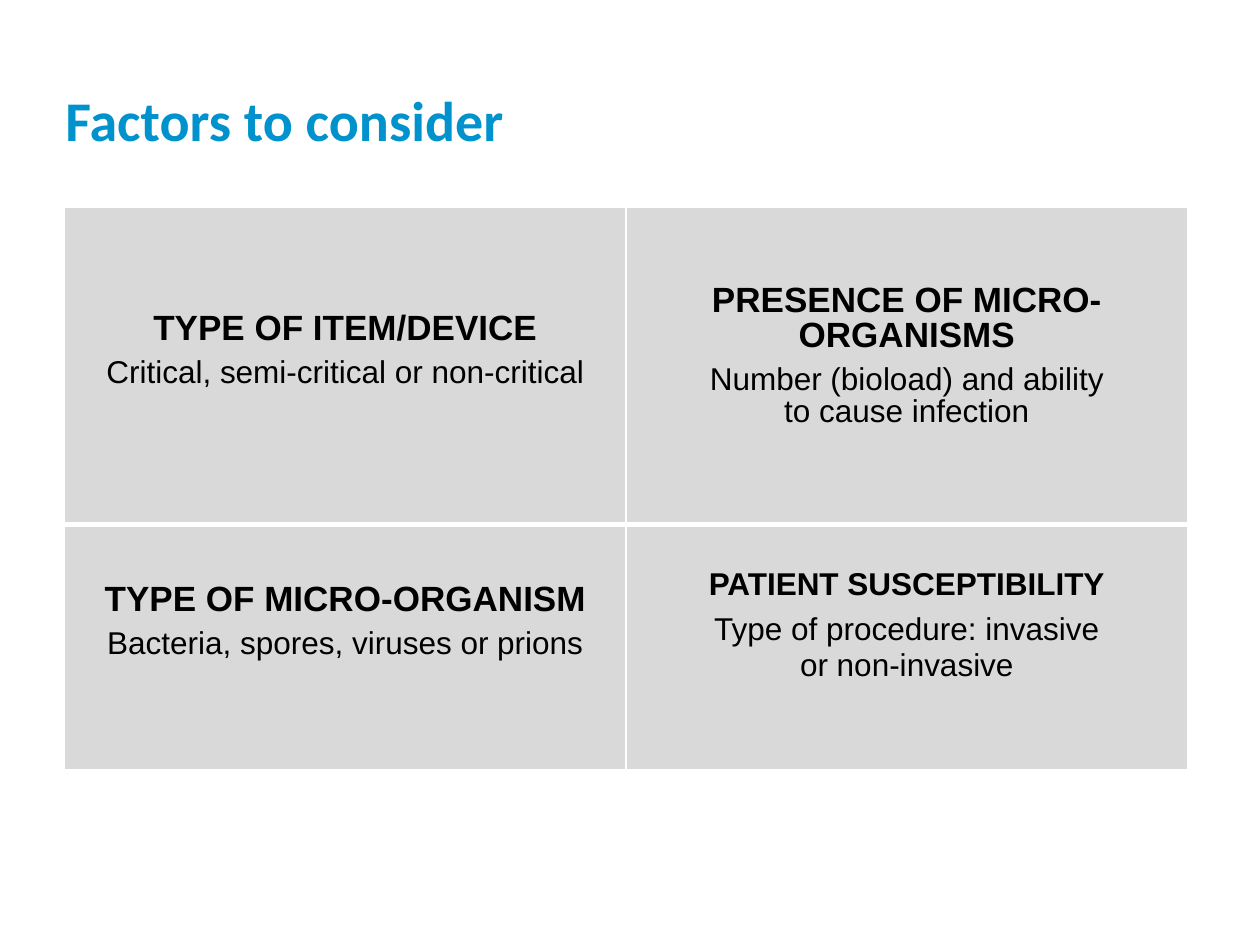
from dataclasses import dataclass

from lxml import etree
from pptx import Presentation
from pptx import util as u
from pptx.dml.color import RGBColor
from pptx.enum import text
from pptx.oxml import ns

BLUE = RGBColor(0x00, 0x92, 0xCC)
GREY = RGBColor(0xD9, 0xD9, 0xD9)
BLACK = RGBColor(0x00, 0x00, 0x00)
WHITE = RGBColor(0xFF, 0xFF, 0xFF)


@dataclass(frozen=True)
class Factor:
    row: int
    col: int
    heading: str
    details: tuple[str, ...]
    top_margin: float
    heading_size: int = 20
    line_spacing: float = 0.9


FACTORS = (
    Factor(0, 0, "TYPE OF ITEM/DEVICE",
           ("Critical, semi-critical or non-critical",), 2.13),
    Factor(0, 1, "PRESENCE OF MICRO-ORGANISMS",
           ("Number (bioload) and ability", "to cause infection"), 1.57),
    Factor(1, 0, "TYPE OF MICRO-ORGANISM",
           ("Bacteria, spores, viruses or prions",), 1.19),
    Factor(1, 1, "PATIENT SUSCEPTIBILITY",
           ("Type of procedure: invasive", "or non-invasive"), 0.85, 18, 1.0),
)


def set_borders(cell, widths: dict[str, float]) -> None:
    tc_pr = cell._tc.get_or_add_tcPr()
    for i, (side, width) in enumerate(widths.items()):
        ln = etree.Element(ns.qn(f"a:ln{side}"), w=str(u.Pt(width)))
        fill = etree.SubElement(ln, ns.qn("a:solidFill"))
        etree.SubElement(fill, ns.qn("a:srgbClr"), val=str(WHITE))
        tc_pr.insert(i, ln)


def fill_cell(cell, factor: Factor) -> None:
    cell.fill.solid()
    cell.fill.fore_color.rgb = GREY
    cell.margin_top = u.Cm(factor.top_margin)
    tf = cell.text_frame
    tf.text = "\n".join((factor.heading, *factor.details))
    for i, p in enumerate(tf.paragraphs):
        is_heading = i == 0
        p.alignment = text.PP_ALIGN.CENTER
        p.line_spacing = factor.line_spacing
        p.space_after = u.Pt(6 if is_heading else 0)
        p.font.name = "Arial"
        p.font.size = u.Pt(factor.heading_size if is_heading else 18)
        p.font.bold = is_heading
        p.font.color.rgb = BLACK
    set_borders(cell, {"L": 1, "R": 1,
                       "T": 3 if factor.row == 1 else 1,
                       "B": 3 if factor.row == 0 else 1})


def add_title(s, title: str) -> None:
    sp = s.shapes.title
    sp.left, sp.top, sp.width, sp.height = (
        u.Cm(1.27), u.Cm(0.38), u.Cm(25.4), u.Cm(2.72))
    tf = sp.text_frame
    tf.text = title
    tf.auto_size = text.MSO_AUTO_SIZE.NONE
    tf.vertical_anchor = text.MSO_ANCHOR.BOTTOM
    tf.margin_left, tf.margin_right = u.Cm(0.05), u.Cm(1)
    tf.margin_top = tf.margin_bottom = 0
    p = tf.paragraphs[0]
    p.alignment = text.PP_ALIGN.LEFT
    p.line_spacing = 0.9
    p.font.name = "Calibri"
    p.font.size = u.Pt(32)
    p.font.bold = True
    p.font.color.rgb = BLUE


def add_factor_table(s, factors: tuple[Factor, ...]) -> None:
    table = s.shapes.add_table(
        2, 2, u.Cm(1.3), u.Cm(4.17), u.Cm(22.64), u.Cm(11.35)).table
    table.first_row = table.horz_banding = False
    for row, height in zip(table.rows, (6.4, 4.95)):
        row.height = u.Cm(height)
    for factor in factors:
        fill_cell(table.cell(factor.row, factor.col), factor)


def main() -> None:
    prs = Presentation()
    prs.slide_width, prs.slide_height = u.Cm(25.4), u.Cm(19.05)
    s = prs.slides.add_slide(prs.slide_layouts[5])
    add_factor_table(s, FACTORS)
    add_title(s, "Factors to consider")
    prs.save("out.pptx")


if __name__ == "__main__":
    main()
